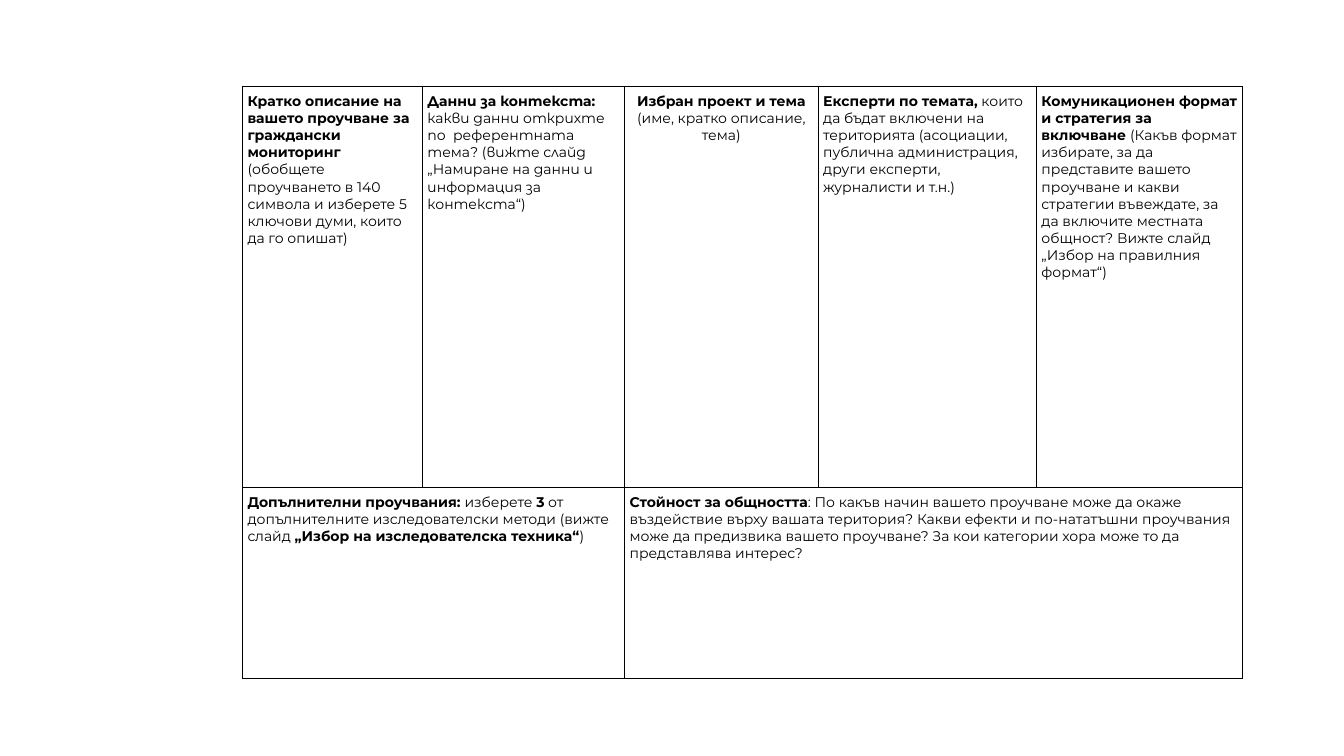
"""Build a one-slide civic monitoring canvas as a bordered table."""
from lxml import etree
from pptx import Presentation
from pptx.dml.color import RGBColor
from pptx.enum.lang import MSO_LANGUAGE_ID
from pptx.enum.text import PP_ALIGN
from pptx.oxml import parse_xml
from pptx.oxml.ns import nsdecls, qn
from pptx.util import Pt

PX = 9144
BLACK = RGBColor(0x00, 0x00, 0x00)
FONT = "Montserrat"
LEFT, CENTER = PP_ALIGN.LEFT, PP_ALIGN.CENTER
BULGARIAN, ENGLISH = MSO_LANGUAGE_ID.BULGARIAN, MSO_LANGUAGE_ID.ENGLISH_US
COLUMN_WIDTHS = [357, 401, 384, 433, 409]
ROW_HEIGHTS = [795, 380]

SUMMARY = [[
    ("Кратко описание на вашето проучване за граждански мониторинг ", True),
    ("(обобщете проучването в 140 символа и изберете 5 ключови думи, които да го опишат)", False),
]]
CONTEXT = [[
    ("Данни за контекста: ", True),
    ("какви данни открихте по  референтната тема? (вижте слайд „Намиране на данни и "
     "информация за контекста“)", False),
]]
PROJECT = [
    [("Избран проект и тема", True)],
    [("(име, кратко описание, тема)", False)],
]
EXPERTS = [[
    ("Експерти по темата,", True),
    (" които да бъдат включени на територията (асоциации, публична администрация, "
     "други експерти, журналисти и т.н.)", False),
]]
COMMUNICATION = [[
    ("Комуникационен формат и стратегия за включване ", True),
    ("(Какъв формат избирате, за да представите вашето проучване и какви стратегии "
     "въвеждате, за да включите местната общност? Вижте слайд „Избор на правилния "
     "формат“)", False),
]]
RESEARCH = [[
    ("Допълнителни проучвания: ", True),
    ("изберете ", False),
    ("3", True),
    (" от допълнителните изследователски методи (вижте слайд ", False),
    ("„Избор на изследователска техника“", True),
    (")", False),
]]
COMMUNITY_VALUE = [[
    ("Стойност за общността", True),
    (": По какъв начин вашето проучване може да окаже въздействие върху вашата "
     "територия? Какви ефекти и по-нататъшни проучвания може да предизвика вашето "
     "проучване? За кои категории хора може то да представлява интерес?", False),
]]


def outline_cell(cell):
    """Clear the cell's fill and draw thin black borders on its four sides."""
    cell.fill.background()
    properties = cell._tc.get_or_add_tcPr()
    for position, side in enumerate(("lnL", "lnR", "lnT", "lnB")):
        border = parse_xml(f'<a:{side} {nsdecls("a")} w="{Pt(0.75)}"/>')
        fill = etree.SubElement(border, qn("a:solidFill"))
        etree.SubElement(fill, qn("a:srgbClr"), val=str(BLACK))
        properties.insert(position, border)


def write_cell(cell, paragraphs, alignment=LEFT, language=ENGLISH):
    """Write paragraphs of (text, bold) runs into a cell."""
    cell.margin_left = cell.margin_right = 10 * PX
    cell.margin_top = cell.margin_bottom = 13 * PX
    frame = cell.text_frame
    for index, runs in enumerate(paragraphs):
        paragraph = frame.add_paragraph() if index else frame.paragraphs[0]
        paragraph.alignment = alignment
        for text, bold in runs:
            run = paragraph.add_run()
            run.text = text
            run.font.name = FONT
            run.font.size = Pt(20)
            run.font.bold = bold
            run.font.color.rgb = BLACK
            run.font.language_id = language


def add_canvas(slide):
    """Add the empty bordered grid with its two merged cells below."""
    canvas = slide.shapes.add_table(
        len(ROW_HEIGHTS), len(COLUMN_WIDTHS), 481 * PX, 171 * PX,
        sum(COLUMN_WIDTHS) * PX, sum(ROW_HEIGHTS) * PX).table
    canvas.first_row = canvas.horz_banding = False
    for column, width in zip(canvas.columns, COLUMN_WIDTHS):
        column.width = width * PX
    for row, height in zip(canvas.rows, ROW_HEIGHTS):
        row.height = height * PX
    for cell in canvas.iter_cells():
        outline_cell(cell)
    canvas.cell(1, 0).merge(canvas.cell(1, 1))
    canvas.cell(1, 2).merge(canvas.cell(1, 4))
    return canvas


def main():
    """Create the slide, fill the canvas and save the file."""
    presentation = Presentation()
    presentation.slide_width = 2666 * PX
    presentation.slide_height = 1500 * PX
    slide = presentation.slides.add_slide(presentation.slide_layouts[6])
    canvas = add_canvas(slide)
    write_cell(canvas.cell(0, 0), SUMMARY)
    write_cell(canvas.cell(0, 1), CONTEXT, language=BULGARIAN)
    write_cell(canvas.cell(0, 2), PROJECT, alignment=CENTER)
    write_cell(canvas.cell(0, 3), EXPERTS)
    write_cell(canvas.cell(0, 4), COMMUNICATION)
    write_cell(canvas.cell(1, 0), RESEARCH)
    write_cell(canvas.cell(1, 2), COMMUNITY_VALUE)
    presentation.save("out.pptx")


if __name__ == "__main__":
    main()
